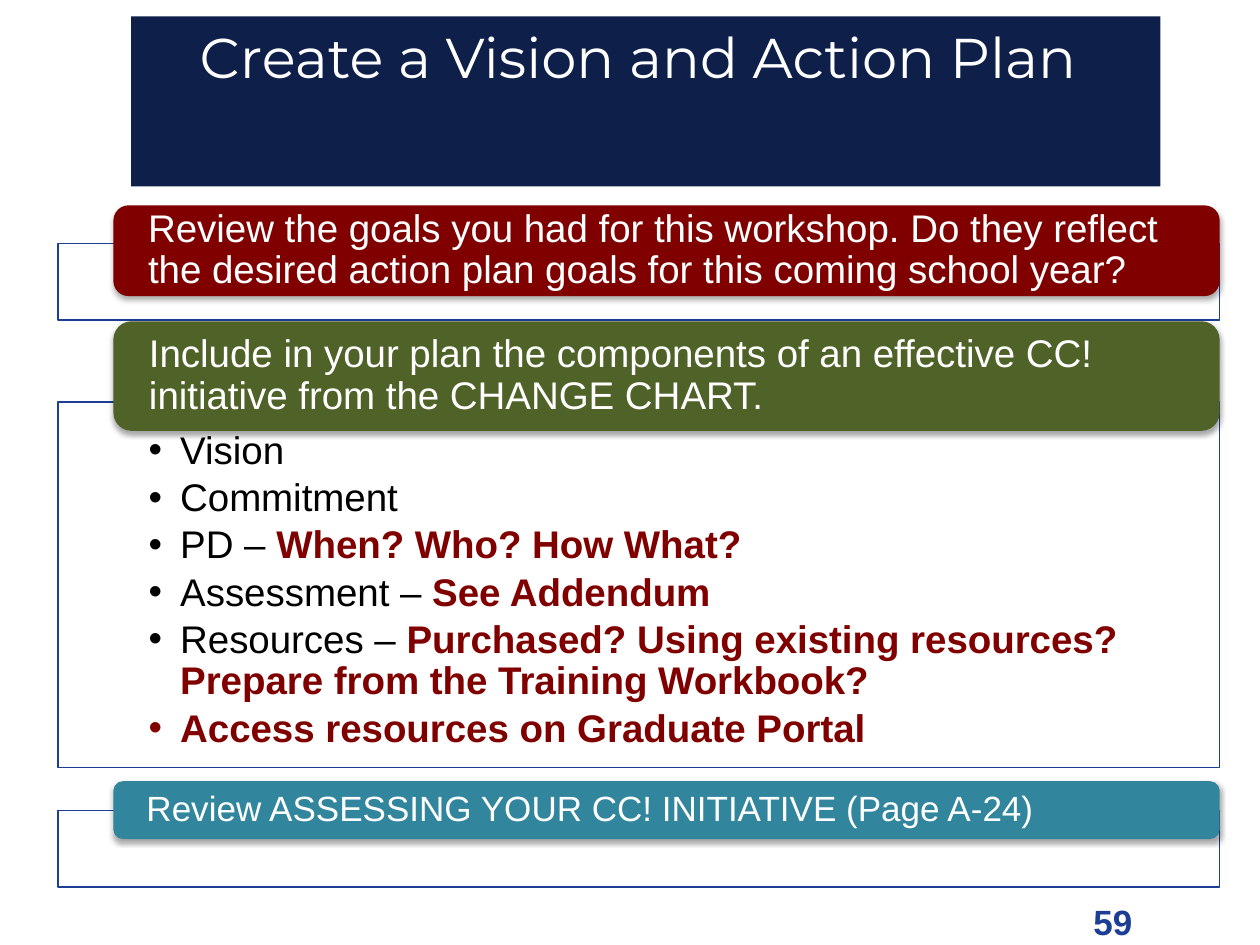
"""Build the slide on creating a vision and action plan."""
from dataclasses import dataclass

from lxml import etree
from pptx import Presentation
from pptx.dml.color import RGBColor
from pptx.enum.shapes import MSO_SHAPE
from pptx.enum.text import MSO_ANCHOR, PP_ALIGN
from pptx.oxml.ns import qn
from pptx.util import Inches, Pt

RECTANGLE = MSO_SHAPE.RECTANGLE
ROUNDED = MSO_SHAPE.ROUNDED_RECTANGLE
TOP, MIDDLE = MSO_ANCHOR.TOP, MSO_ANCHOR.MIDDLE
LEFT, CENTER = PP_ALIGN.LEFT, PP_ALIGN.CENTER


@dataclass(frozen=True)
class Theme:
    navy: str = "0E1F4A"
    blue: str = "1C3F95"
    maroon: str = "800000"
    olive: str = "4F6228"
    teal: str = "31859C"
    white: str = "FFFFFF"
    black: str = "000000"
    body_font: str = "Arial"
    title_font: str = "Montserrat"
    title_size: float = 32
    body_size: float = 22
    small_size: float = 20


THEME = Theme()


@dataclass(frozen=True)
class Section:
    heading: str
    color: str
    size: float
    band_top: float
    band_height: float
    frame_top: float
    frame_height: float
    items: tuple[tuple[str, str], ...] = ()


SECTIONS = (
    Section(
        "Review the goals you had for this workshop. Do they reflect "
        "the desired action plan goals for this coming school year?",
        THEME.maroon, THEME.body_size, 1.63, 0.72, 1.93, 0.61,
    ),
    Section(
        "Include in your plan the components of an effective CC! "
        "initiative from the CHANGE CHART.",
        THEME.olive, THEME.body_size, 2.55, 0.87, 3.19, 2.9,
        (
            ("Vision", ""),
            ("Commitment", ""),
            ("PD – ", "When? Who? How What?"),
            ("Assessment – ", "See Addendum"),
            ("Resources – ", "Purchased? Using existing resources? "
                             "Prepare from the Training Workbook?"),
            ("", "Access resources on Graduate Portal"),
        ),
    ),
    Section(
        "Review ASSESSING YOUR CC! INITIATIVE (Page A-24)",
        THEME.teal, THEME.small_size, 6.2, 0.46, 6.43, 0.61,
    ),
)


def add_span(para, text: str, *, size: float = THEME.body_size, color: str = THEME.white,
             font: str = THEME.body_font, bold: bool = False) -> None:
    """Append formatted text to a paragraph."""
    span = para.add_run()
    span.text = text
    span.font.name = font
    span.font.size = Pt(size)
    span.font.bold = bold
    span.font.color.rgb = RGBColor.from_string(color)


def add_box(page, shape_type, left: float, top: float, width: float, height: float,
            *, fill: str, line: str = ""):
    """Add a filled shape without a shadow."""
    box = page.shapes.add_shape(
        shape_type, Inches(left), Inches(top), Inches(width), Inches(height))
    box.fill.solid()
    box.fill.fore_color.rgb = RGBColor.from_string(fill)
    if line:
        box.line.color.rgb = RGBColor.from_string(line)
        box.line.width = Pt(0.75)
    else:
        box.line.fill.background()
    box.shadow.inherit = False
    return box


def set_frame(box, anchor, *, left: float, top: float, right: float, bottom: float):
    """Set wrapping, anchor and insets, and return the text frame."""
    frame = box.text_frame
    frame.word_wrap = True
    frame.vertical_anchor = anchor
    frame.margin_left, frame.margin_right = Inches(left), Inches(right)
    frame.margin_top, frame.margin_bottom = Inches(top), Inches(bottom)
    return frame


def add_soft_shadow(box) -> None:
    """Give a shape a soft shadow falling straight down."""
    effects = box._element.spPr.find(qn("a:effectLst"))
    shadow = etree.SubElement(
        effects, qn("a:outerShdw"), blurRad=str(Pt(3.1)), dist=str(Pt(1.8)),
        dir="5400000", rotWithShape="0")
    color = etree.SubElement(shadow, qn("a:srgbClr"), val=THEME.black)
    etree.SubElement(color, qn("a:alpha"), val="35000")


def add_bullet(para) -> None:
    """Give a paragraph a hanging round bullet."""
    properties = para._p.get_or_add_pPr()
    properties.set("marL", str(Inches(0.25)))
    properties.set("indent", str(Inches(-0.25)))
    etree.SubElement(properties, qn("a:buFont"), typeface=THEME.body_font)
    etree.SubElement(properties, qn("a:buChar"), char="•")


def add_items(box, items: tuple[tuple[str, str], ...]) -> None:
    """Write the bulleted list with emphasised details."""
    frame = set_frame(box, TOP, left=0.72, top=0.23, right=0.72, bottom=0.17)
    for index, (label, detail) in enumerate(items):
        para = frame.add_paragraph() if index else frame.paragraphs[0]
        add_bullet(para)
        para.alignment = LEFT
        para.line_spacing = 0.9
        para.space_after = Pt(3.3)
        if label:
            add_span(para, label, color=THEME.black)
        if detail:
            add_span(para, detail, color=THEME.maroon, bold=True)


def add_section(page, section: Section) -> None:
    """Draw an outlined frame with its heading band."""
    frame_box = add_box(page, RECTANGLE, 0.46, section.frame_top, 9.22,
                        section.frame_height, fill=THEME.white, line=THEME.blue)
    if section.items:
        add_items(frame_box, section.items)
    band = add_box(page, ROUNDED, 0.9, section.band_top, 8.78,
                   section.band_height, fill=section.color)
    add_soft_shadow(band)
    frame = set_frame(band, MIDDLE, left=0.24, top=0, right=0.24, bottom=0)
    para = frame.paragraphs[0]
    para.alignment = LEFT
    para.line_spacing = 0.9
    add_span(para, section.heading, size=section.size)


def add_title(page) -> None:
    """Draw the title banner."""
    box = add_box(page, RECTANGLE, 1.04, 0.13, 8.17, 1.35, fill=THEME.navy)
    frame = set_frame(box, TOP, left=0.1, top=0.05, right=0.1, bottom=0.05)
    para = frame.paragraphs[0]
    para.alignment = CENTER
    add_span(para, "Create a Vision and Action Plan ",
             size=THEME.title_size, font=THEME.title_font)


def add_page_number(page) -> None:
    """Write the page number."""
    box = page.shapes.add_textbox(Inches(8.58), Inches(7.1), Inches(0.54), Inches(0.44))
    box.text_frame.word_wrap = False
    add_span(box.text_frame.paragraphs[0], "59", size=THEME.small_size,
             color=THEME.blue, bold=True)


def main() -> None:
    """Build and save the deck."""
    deck = Presentation()
    deck.slide_width, deck.slide_height = Inches(10), Inches(7.5)
    page = deck.slides.add_slide(deck.slide_layouts[6])
    add_page_number(page)
    for section in SECTIONS:
        add_section(page, section)
    add_title(page)
    deck.save("out.pptx")


if __name__ == "__main__":
    main()
